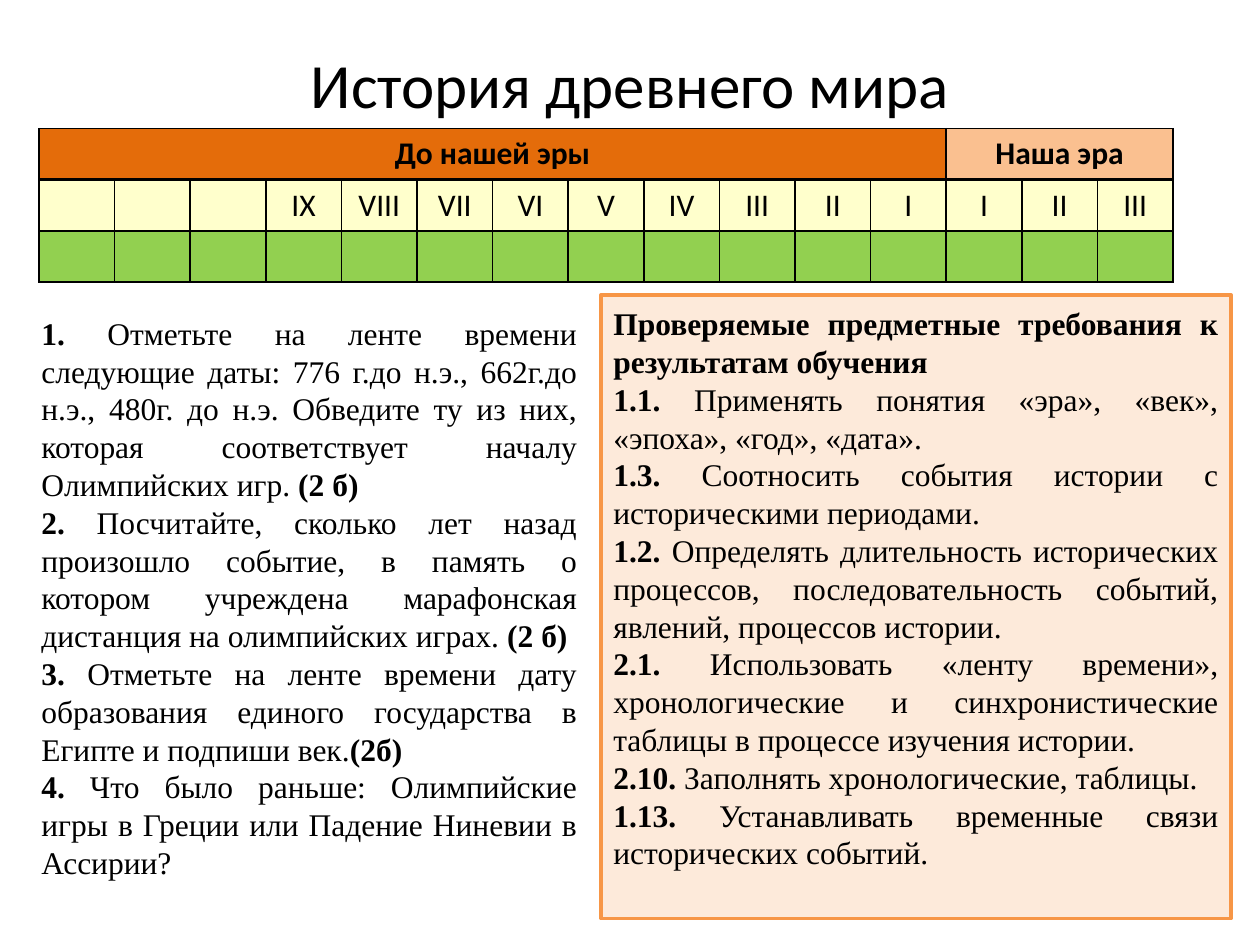
from dataclasses import dataclass

from lxml.etree import SubElement
from pptx import Presentation
from pptx.dml.color import RGBColor
from pptx.enum.shapes import MSO_SHAPE
from pptx.enum.text import MSO_ANCHOR, PP_ALIGN
from pptx.oxml.ns import qn
from pptx.util import Inches, Pt


@dataclass(frozen=True)
class Theme:
    """Colours, fonts and type sizes of the slide."""
    text: str = "000000"
    before: str = "E46C0A"
    after: str = "FAC090"
    century: str = "FFFF00"
    century_alpha: int = 20
    ribbon: str = "92D050"
    panel: str = "FDEADA"
    panel_line: str = "F79646"
    heading_font: str = "Calibri"
    body_font: str = "Times New Roman"
    title_size: int = 36
    body_size: int = 18


@dataclass(frozen=True)
class Box:
    """A rectangle on the slide, in inches."""
    left: float
    top: float
    width: float
    height: float

    def emu(self):
        """Return the four lengths for python-pptx."""
        return [Inches(v) for v in (self.left, self.top, self.width, self.height)]


@dataclass(frozen=True)
class Item:
    """A paragraph with a bold lead, a plain body and a bold score."""
    lead: str
    body: str = ""
    score: str = ""


@dataclass(frozen=True)
class Era:
    """A merged heading above several centuries."""
    name: str
    centuries: list[str]
    color: str


THEME = Theme()
ERAS = [
    Era("До нашей эры", ["", "", "", "IX", "VIII", "VII", "VI", "V", "IV", "III", "II", "I"], THEME.before),
    Era("Наша эра", ["I", "II", "III"], THEME.after),
]
TASKS = [
    Item("1.", " Отметьте на ленте времени следующие даты: 776 г.до н.э., 662г.до н.э., 480г. до н.э. "
         "Обведите ту из них, которая соответствует началу Олимпийских игр. ", "(2 б)"),
    Item("2.", " Посчитайте, сколько лет назад произошло событие, в память о котором учреждена "
         "марафонская дистанция на олимпийских играх.", " (2 б)"),
    Item("3.", " Отметьте на ленте времени дату образования единого государства в Египте "
         "и подпиши век.", "(2б)"),
    Item("4.", " Что было раньше: Олимпийские игры в Греции или Падение Ниневии в Ассирии?"),
]
REQUIREMENTS = [
    Item("Проверяемые предметные требования к результатам обучения"),
    Item("1.1.", " Применять понятия «эра», «век», «эпоха», «год», «дата»."),
    Item("1.3.", " Соотносить события истории с историческими периодами."),
    Item("1.2.", " Определять длительность исторических процессов, последовательность событий, "
         "явлений, процессов истории."),
    Item("2.1.", " Использовать «ленту времени», хронологические и синхронистические таблицы "
         "в процессе изучения истории."),
    Item("2.10.", " Заполнять хронологические, таблицы."),
    Item("1.13.", " Устанавливать временные связи исторических событий."),
]


def style_paragraph(p, font: str, size: int, align: PP_ALIGN) -> None:
    """Set the font and alignment of a paragraph."""
    p.alignment = align
    p.font.name, p.font.size = font, Pt(size)
    p.font.color.rgb = RGBColor.from_string(THEME.text)


def add_items(sp, items: list[Item]) -> None:
    """Write justified items, centred vertically in the shape."""
    tf = sp.text_frame
    tf.word_wrap, tf.vertical_anchor = True, MSO_ANCHOR.MIDDLE
    for i, item in enumerate(items):
        p = tf.add_paragraph() if i else tf.paragraphs[0]
        style_paragraph(p, THEME.body_font, THEME.body_size, PP_ALIGN.JUSTIFY)
        for text, bold in ((item.lead, True), (item.body, False), (item.score, True)):
            if text:
                r = p.add_run()
                r.text, r.font.bold = text, bold


def style_cell(cell, text: str, color: str, top: int = 1, bottom: int = 1,
               bold: bool = False, alpha: int = 100) -> None:
    """Set the text, borders and fill of a table cell."""
    cell.text = text
    p = cell.text_frame.paragraphs[0]
    style_paragraph(p, THEME.heading_font, THEME.body_size, PP_ALIGN.CENTER)
    p.font.bold = bold
    tc_pr = cell._tc.get_or_add_tcPr()
    for side, width in (("L", 1), ("R", 1), ("T", top), ("B", bottom)):
        ln = SubElement(tc_pr, qn(f"a:ln{side}"), w=str(Pt(width)))
        SubElement(SubElement(ln, qn("a:solidFill")), qn("a:srgbClr"), val=THEME.text)
    cell.fill.solid()
    cell.fill.fore_color.rgb = RGBColor.from_string(color)
    if alpha < 100:
        SubElement(tc_pr.find(qn("a:solidFill"))[0], qn("a:alpha"), val=str(alpha * 1000))


def add_timeline(s, box: Box, eras: list[Era]) -> None:
    """Draw the table of eras, centuries and the empty ribbon."""
    count = sum(len(era.centuries) for era in eras)
    table = s.shapes.add_table(3, count, *box.emu()).table
    table.first_row = table.horz_banding = False
    for column in table.columns:
        column.width = Inches(box.width / count)
    col = 0
    for era in eras:
        first = col
        for century in era.centuries:
            style_cell(table.cell(0, col), era.name if col == first else "", era.color,
                       bottom=2, bold=True)
            style_cell(table.cell(1, col), century, THEME.century, top=2, alpha=THEME.century_alpha)
            style_cell(table.cell(2, col), "", THEME.ribbon)
            col += 1
        table.cell(0, first).merge(table.cell(0, col - 1))


def add_title(s, box: Box, text: str) -> None:
    """Draw the centred slide title."""
    tf = s.shapes.add_textbox(*box.emu()).text_frame
    tf.word_wrap, tf.vertical_anchor = True, MSO_ANCHOR.MIDDLE
    p = tf.paragraphs[0]
    p.text = text
    style_paragraph(p, THEME.heading_font, THEME.title_size, PP_ALIGN.CENTER)


def add_panel(s, box: Box, items: list[Item]) -> None:
    """Draw the outlined panel of requirements."""
    sp = s.shapes.add_shape(MSO_SHAPE.RECTANGLE, *box.emu())
    sp.shadow.inherit = False
    sp.fill.solid()
    sp.fill.fore_color.rgb = RGBColor.from_string(THEME.panel)
    sp.line.color.rgb = RGBColor.from_string(THEME.panel_line)
    sp.line.width = Pt(2)
    sp.text_frame.margin_bottom = Inches(0.35)
    add_items(sp, items)


def main() -> None:
    """Build and save the slide."""
    prs = Presentation()
    prs.slide_width, prs.slide_height = Inches(10), Inches(7.5)
    s = prs.slides.add_slide(prs.slide_layouts[6])
    add_title(s, Box(0.5, 0.3, 9, 0.72), "История древнего мира")
    add_timeline(s, Box(0.31, 1.02, 9, 1.22), ERAS)
    add_items(s.shapes.add_textbox(*Box(0.23, 2.42, 4.45, 4.64).emu()), TASKS)
    add_panel(s, Box(4.77, 2.34, 5, 4.95), REQUIREMENTS)
    prs.save("out.pptx")


if __name__ == "__main__":
    main()
